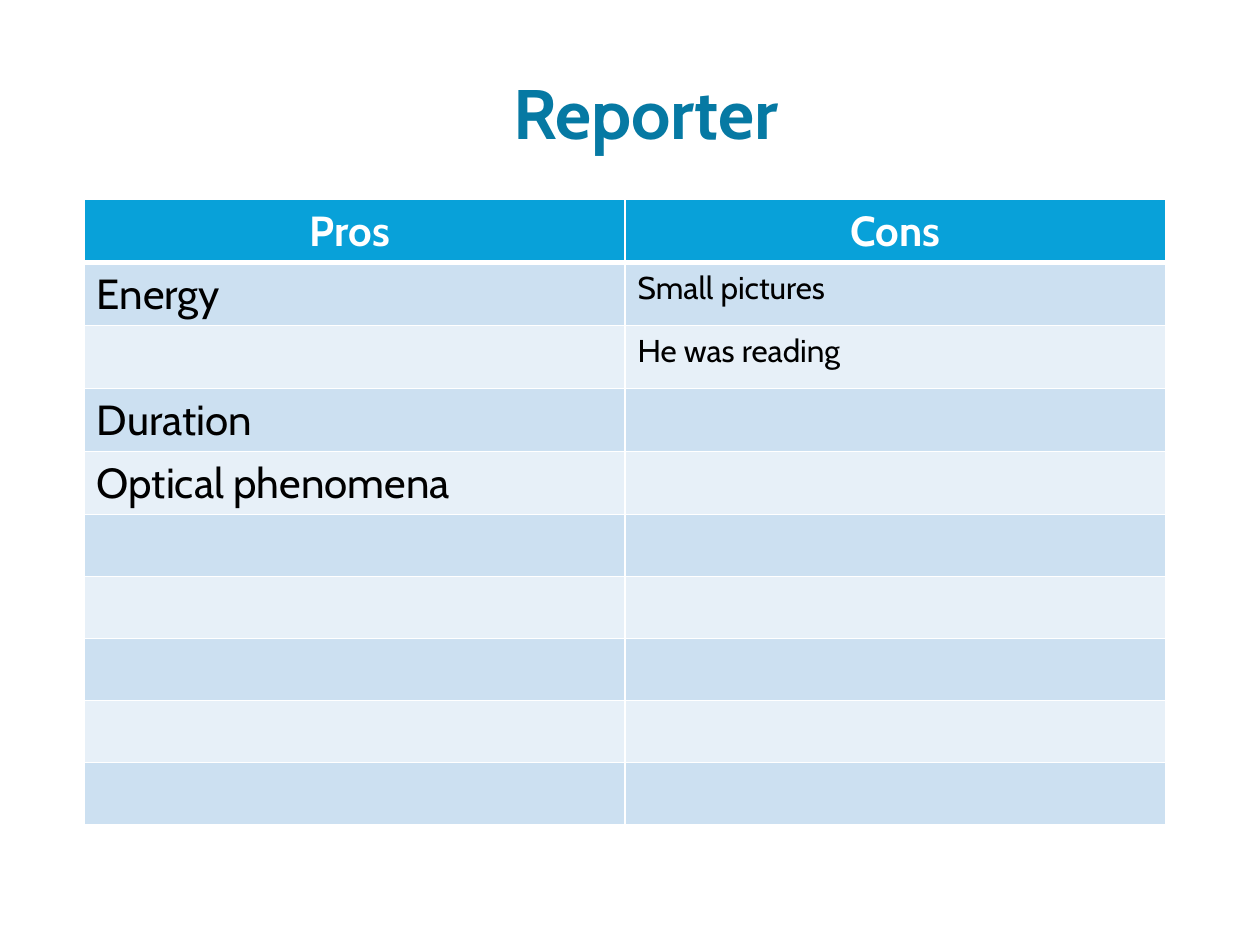
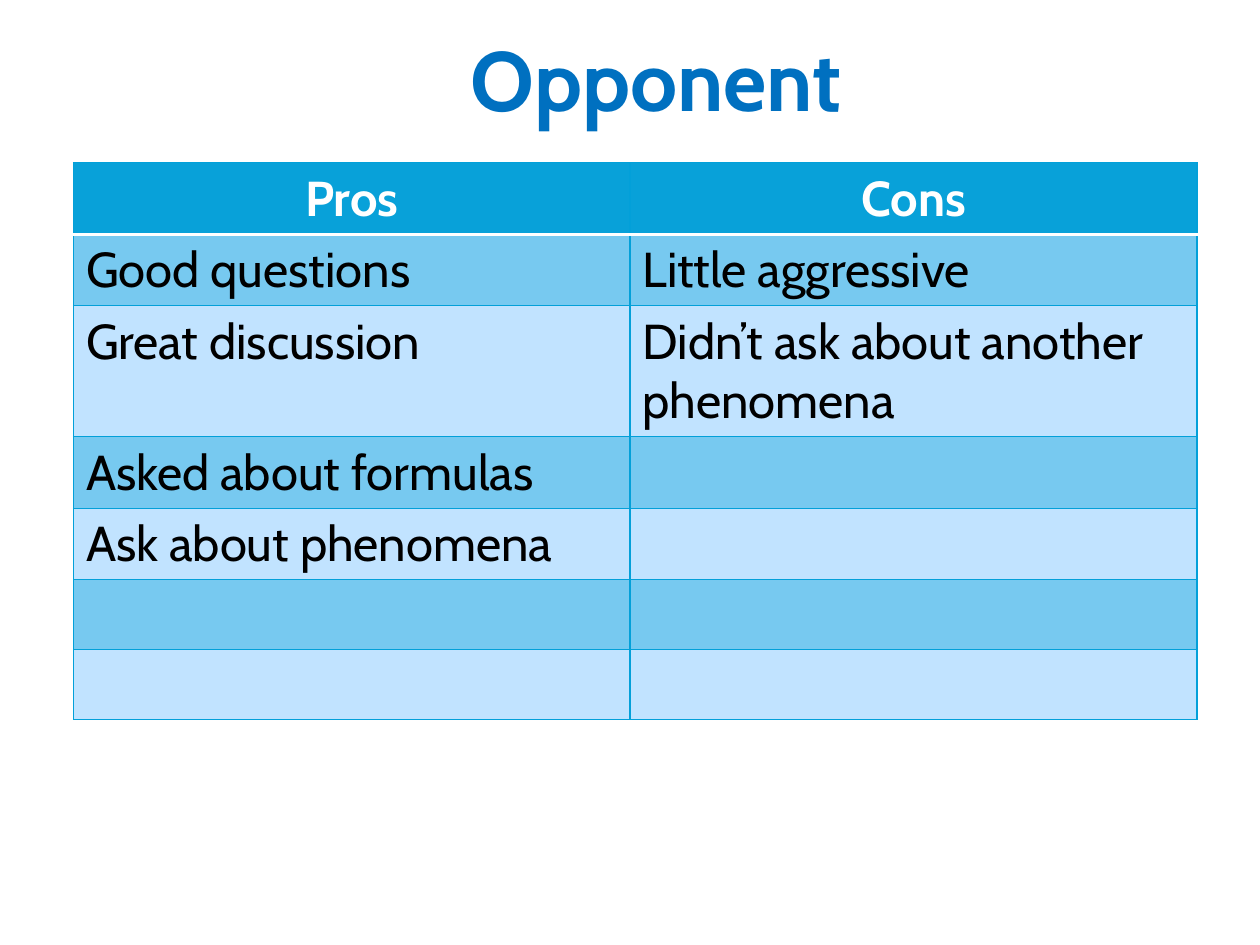
from lxml.etree import SubElement
from pptx import Presentation
from pptx.dml.color import RGBColor
from pptx.enum.text import PP_ALIGN
from pptx.oxml.ns import qn
from pptx.util import Cm, Pt

FONT = "Cabin"
WHITE = RGBColor(0xFF, 0xFF, 0xFF)
BLACK = RGBColor(0x00, 0x00, 0x00)
TEAL = RGBColor(0x06, 0x79, 0xA3)
BLUE = RGBColor(0x00, 0x70, 0xC0)
HEADER_BLUE = RGBColor(0x08, 0xA1, 0xD9)
GRID_BLUE = RGBColor(0x03, 0xA0, 0xD9)
SOFT_BANDS = (RGBColor(0xCC, 0xE0, 0xF1), RGBColor(0xE7, 0xF0, 0xF8))
BRIGHT_BANDS = (RGBColor(0x77, 0xC9, 0xF0), RGBColor(0xC1, 0xE3, 0xFF))


class Deck:
    def __init__(self):
        self.presentation = Presentation()
        self.presentation.slide_width = Cm(25.4)
        self.presentation.slide_height = Cm(19.05)
        self.slide = None

    def add_slide(self):
        self.slide = self.presentation.slides.add_slide(self.presentation.slide_layouts[6])

    def add_text(self, paragraph, text, size, color, bold=False, alignment=PP_ALIGN.LEFT):
        paragraph.alignment = alignment
        run = paragraph.add_run()
        run.text = text
        run.font.color.rgb = color
        font_format = {"name": FONT, "size": Pt(size), "bold": bold}
        for name, value in font_format.items():
            setattr(run.font, name, value)

    def title(self, text, box, size, color):
        shape = self.slide.shapes.add_textbox(*map(Cm, box))
        shape.text_frame.word_wrap = True
        self.add_text(shape.text_frame.paragraphs[0], text, size, color, True, PP_ALIGN.CENTER)

    def border(self, cell, side, color, width):
        properties = cell._tc.get_or_add_tcPr()
        line = SubElement(properties, qn(f"a:ln{side}"), w=str(Pt(width)))
        fill = SubElement(line, qn("a:solidFill"))
        SubElement(fill, qn("a:srgbClr"), val=str(color))

    def table(self, position, column_widths, row_heights, rows, sizes, bands, grid, header_rule):
        frame = self.slide.shapes.add_table(
            len(row_heights), len(column_widths), *map(Cm, position),
            Cm(sum(column_widths)), Cm(sum(row_heights)))
        table = frame.table
        table_format = {"first_row": False, "horz_banding": False}
        for name, value in table_format.items():
            setattr(table, name, value)
        for column, width in zip(table.columns, column_widths):
            column.width = Cm(width)
        for row_index, height in enumerate(row_heights):
            table.rows[row_index].height = Cm(height)
            texts = rows[row_index] if row_index < len(rows) else ("", "")
            is_header = row_index == 0
            for column_index, text in enumerate(texts):
                cell = table.cell(row_index, column_index)
                edges = {"L": grid, "R": grid, "T": grid, "B": grid}
                if row_index < 2:
                    edges["B" if is_header else "T"] = header_rule
                for side, (color, width) in edges.items():
                    self.border(cell, side, color, width)
                cell.fill.solid()
                cell.fill.fore_color.rgb = HEADER_BLUE if is_header else bands[(row_index - 1) % 2]
                if not text:
                    continue
                paragraph = cell.text_frame.paragraphs[0]
                if is_header:
                    self.add_text(paragraph, text, sizes[0], WHITE, True, PP_ALIGN.CENTER)
                else:
                    self.add_text(paragraph, text, sizes[column_index], BLACK)


def main():
    deck = Deck()

    deck.add_slide()
    deck.title("Reporter", (3.6, 1.27, 18.85, 1.96), 40, TEAL)
    deck.table(
        position=(1.7, 4.02),
        column_widths=(10.9, 10.9),
        row_heights=[1.27] * 5 + [1.25] * 5,
        rows=[
            ("Pros ", "Cons"),
            ("Energy", "Small pictures"),
            ("", "He was reading"),
            ("Duration", ""),
            ("Optical phenomena", ""),
        ],
        sizes=(24, 18),
        bands=SOFT_BANDS,
        grid=(WHITE, 1),
        header_rule=(WHITE, 3),
    )

    deck.add_slide()
    deck.title("Opponent", (4.02, 0.43, 18.42, 4.37), 48, BLUE)
    deck.table(
        position=(1.48, 3.28),
        column_widths=(11.22, 11.43),
        row_heights=[1.44, 1.44, 2.64, 1.44, 1.44, 1.41, 1.41],
        rows=[
            ("Pros", "Cons"),
            ("Good questions", "Little aggressive"),
            ("Great discussion", "Didn’t ask about another phenomena"),
            ("Asked about formulas", ""),
            ("Ask about phenomena", ""),
        ],
        sizes=(28, 28),
        bands=BRIGHT_BANDS,
        grid=(GRID_BLUE, 0.75),
        header_rule=(WHITE, 2),
    )

    deck.presentation.save("out.pptx")


if __name__ == "__main__":
    main()
